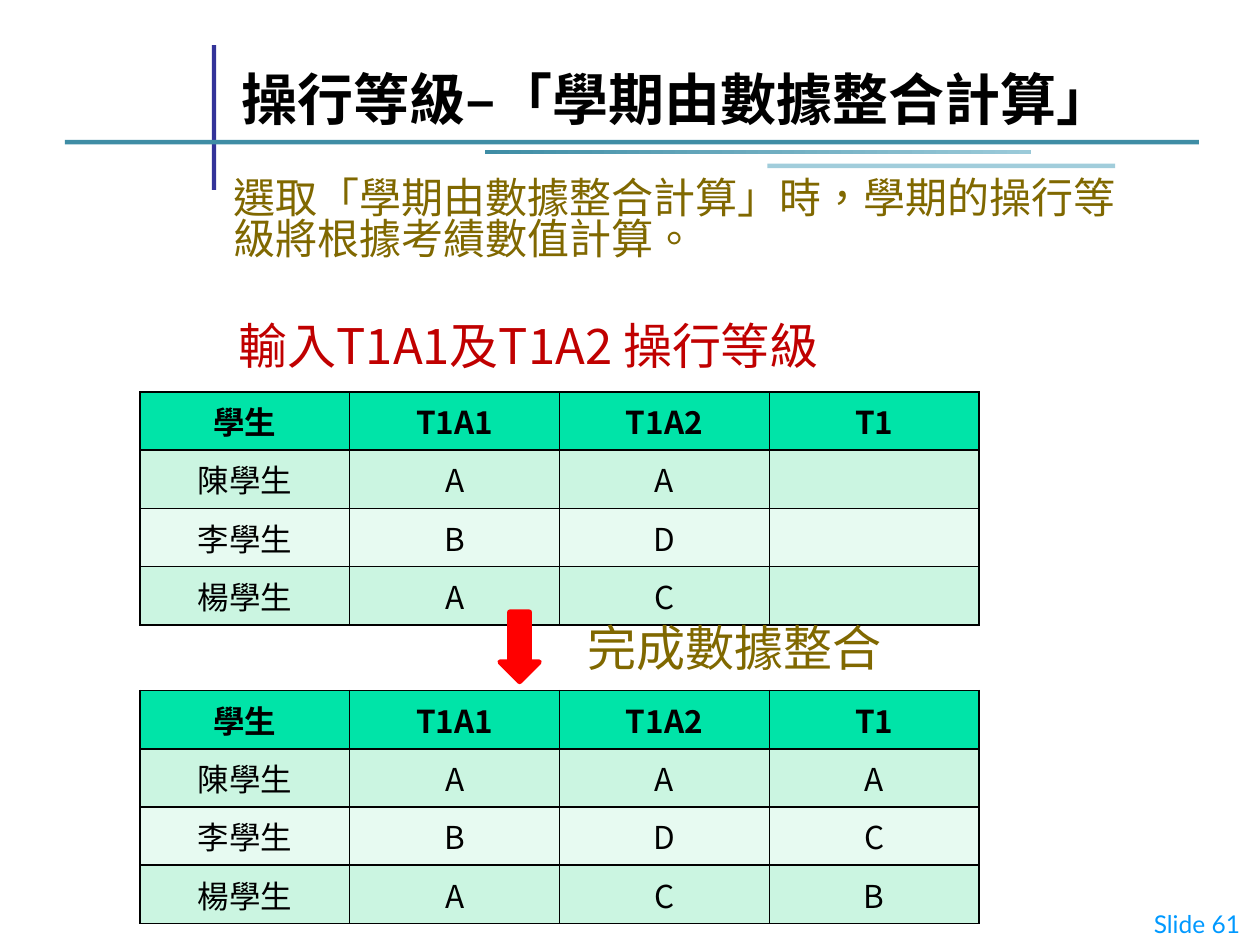
from lxml.etree import SubElement
from pptx import Presentation
from pptx.dml.color import RGBColor
from pptx.enum.shapes import MSO_SHAPE as Shape
from pptx.enum.text import MSO_ANCHOR as Anchor, PP_ALIGN as Align
from pptx.oxml.ns import qn
from pptx.util import Cm, Pt

BLACK = RGBColor(0x00, 0x00, 0x00)
NAVY = RGBColor(0x33, 0x33, 0x99)
TEAL = RGBColor(0x3F, 0x8D, 0xA5)
SKY = RGBColor(0x9B, 0xCA, 0xD9)
PALE_SKY = RGBColor(0xA1, 0xCD, 0xDB)
BLUE = RGBColor(0x00, 0x99, 0xFF)
DARK_RED = RGBColor(0xC0, 0x00, 0x00)
RED = RGBColor(0xFF, 0x00, 0x00)
OLIVE = RGBColor(0x80, 0x68, 0x00)
HEADER_GREEN = RGBColor(0x00, 0xE4, 0xA8)
BAND_GREENS = (RGBColor(0xCB, 0xF5, 0xE1), RGBColor(0xE7, 0xFA, 0xF1))

CJK = "Noto Sans CJK SC"
TITLE = "操行等級–「學期由數據整合計算」"

# left, top, width, height in cm
TITLE_AT = (4.62, 0.99, 18.39, 1.8)
BARS = [
    ((4.27, 0.91, 0.09, 2.92), NAVY),
    ((1.31, 2.82, 22.86, 0.09), TEAL),
    ((9.78, 3.02, 11, 0.09), (TEAL, SKY)),
    ((15.47, 3.3, 7.01, 0.09), PALE_SKY),
]
BODY = dict(align=Align.LEFT, size=Pt(24), color=OLIVE, line_spacing=0.82)
STEP = dict(align=Align.CENTER, size=Pt(28), anchor=Anchor.BOTTOM)
TEXTS = [
    ("Slide 61", (0, 18.21, 25.25, 0.84),
     dict(align=Align.RIGHT, size=Pt(14), color=BLUE, face="Lato")),
    ("輸入T1A1及T1A2 操行等級", (3.56, 6.15, 14.2, 1.52), dict(STEP, color=DARK_RED)),
    ("完成數據整合", (11.3, 12.24, 7.01, 1.52), dict(STEP, color=OLIVE)),
    ("選取「學期由數據整合計算」時，學期的操行等級將根據考績數值計算。",
     (4.45, 3.51, 18.59, 2.31), BODY),
]
HEADER = ("學生", "T1A1", "T1A2", "T1")
STUDENTS = [
    ("陳學生", "A", "A", "A"),
    ("李學生", "B", "D", "C"),
    ("楊學生", "A", "C", "B"),
]
TABLES = [
    (7.9, [HEADER] + [(*row[:-1], "") for row in STUDENTS]),
    (13.92, [HEADER] + STUDENTS),
]
TABLE_LEFT, COLUMN_WIDTH, ROW_HEIGHT = 2.82, 4.23, 1.03
ARROW_AT = (10.08, 12.34, 0.79, 1.4)


def in_cm(at):
    return [Cm(value) for value in at]


def write(frame, text, align, size, color, face=CJK, bold=False,
          anchor=Anchor.TOP, line_spacing=None):
    frame.word_wrap = True
    frame.vertical_anchor = anchor
    para = frame.paragraphs[0]
    para.alignment = align
    para.line_spacing = line_spacing
    span = para.add_run()
    span.text = text
    for name, value in dict(name=face, size=size, bold=bold).items():
        setattr(span.font, name, value)
    span.font.color.rgb = color
    properties = span._r.get_or_add_rPr()
    properties.set("lang", "zh-TW")
    SubElement(properties, qn("a:ea"), typeface=face)


def add_filled(page, kind, at, fill):
    """Add a shape with one colour, or a left-to-right gradient of two."""
    shape = page.shapes.add_shape(kind, *in_cm(at))
    shape.shadow.inherit = False
    shape.line.fill.background()
    if isinstance(fill, RGBColor):
        shape.fill.solid()
        shape.fill.fore_color.rgb = fill
    else:
        shape.fill.gradient()
        shape.fill.gradient_angle = 0
        for stop, color in zip(shape.fill.gradient_stops, fill):
            stop.color.rgb = color
    return shape


def fill_cell(cell, color):
    """Give the cell its black borders, then its fill."""
    properties = cell._tc.get_or_add_tcPr()
    for side in ("lnL", "lnR", "lnT", "lnB"):
        line = SubElement(properties, qn(f"a:{side}"), w=str(Pt(1)))
        solid = SubElement(line, qn("a:solidFill"))
        SubElement(solid, qn("a:srgbClr"), val=str(BLACK))
    cell.fill.solid()
    cell.fill.fore_color.rgb = color


def add_grades(page, top, rows):
    columns = len(HEADER)
    at = (TABLE_LEFT, top, COLUMN_WIDTH * columns, ROW_HEIGHT * len(rows))
    table = page.shapes.add_table(len(rows), columns, *in_cm(at)).table
    for r, row in enumerate(rows):
        color = BAND_GREENS[(r - 1) % 2] if r else HEADER_GREEN
        for c, text in enumerate(row):
            cell = table.cell(r, c)
            fill_cell(cell, color)
            if text:
                write(cell.text_frame, text, Align.CENTER, Pt(18), BLACK, bold=r == 0)


def main():
    deck = Presentation()
    deck.slide_width, deck.slide_height = Cm(25.4), Cm(19.05)
    page = deck.slides.add_slide(deck.slide_layouts[5])
    for at, fill in BARS:
        add_filled(page, Shape.RECTANGLE, at, fill)

    title = page.shapes.title
    title.left, title.top, title.width, title.height = in_cm(TITLE_AT)
    write(title.text_frame, TITLE, Align.LEFT, Pt(32), BLACK, bold=True, anchor=Anchor.BOTTOM)

    for top, rows in TABLES:
        add_grades(page, top, rows)

    arrow = add_filled(page, Shape.DOWN_ARROW, ARROW_AT, RED)
    arrow.line.color.rgb = RED
    arrow.line.width = Pt(3)

    for text, at, style in TEXTS:
        box = page.shapes.add_textbox(*in_cm(at))
        write(box.text_frame, text, **style)
    deck.save("out.pptx")


if __name__ == "__main__":
    main()
